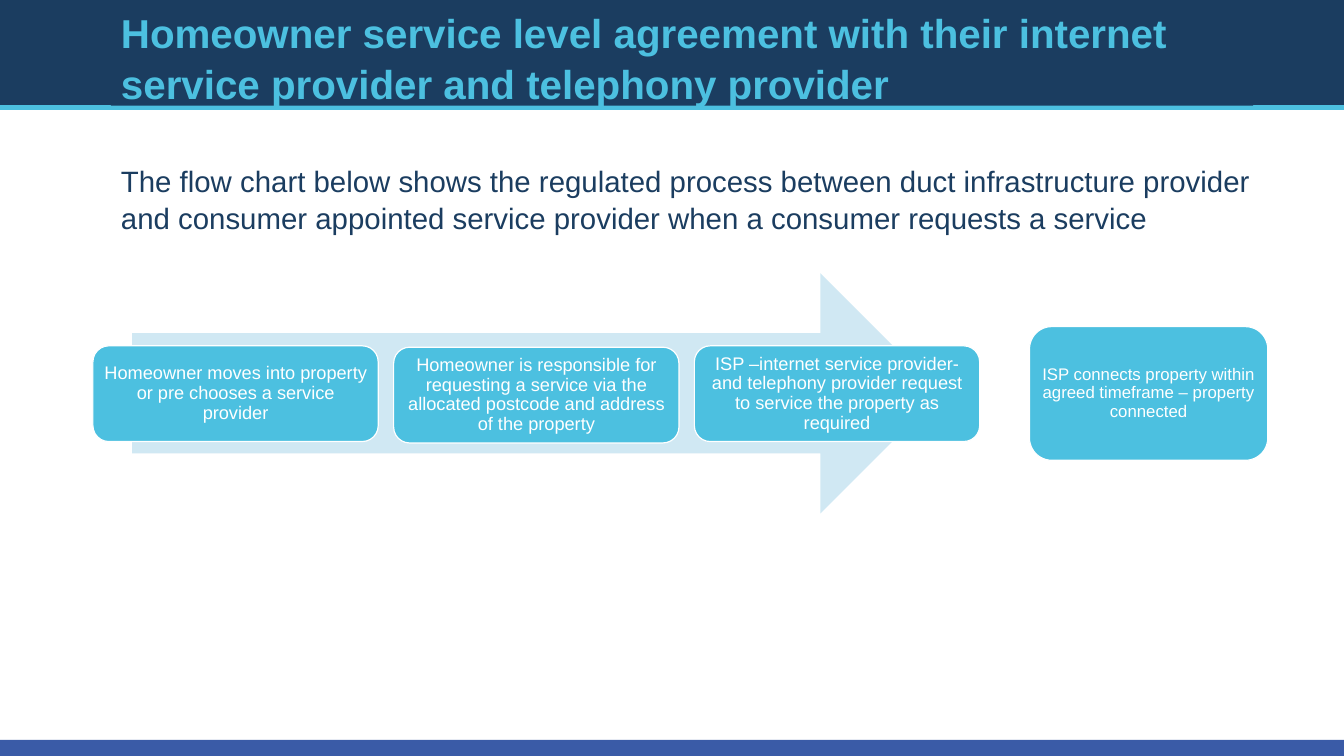
from pptx import Presentation
from pptx import util as u
from pptx.dml.color import RGBColor
from pptx.enum import shapes, text
from pptx.oxml.ns import qn
from lxml import etree

NAVY, SKY, PALE, BLUE, WHITE = "1B3D60", "4CC0E0", "D0E8F3", "3A5BA7", "FFFFFF"
PAGE_WIDTH, PAGE_HEIGHT = 960, 540


def colour(value):
    return RGBColor.from_string(value)


class SlideBuilder:
    font_name = "Arial"

    def __init__(self, page):
        self.page = page
        self.backdrop_index = 2

    def send_back(self, item):
        self.page.shapes._spTree.insert(self.backdrop_index, item._element)
        self.backdrop_index += 1

    def shape(self, kind, left, top, width, height, fill, outline=None):
        box = self.page.shapes.add_shape(
            kind, u.Pt(left), u.Pt(top), u.Pt(width), u.Pt(height))
        box.shadow.inherit = False
        box.fill.solid()
        box.fill.fore_color.rgb = colour(fill)
        if outline:
            box.line.color.rgb = colour(outline)
            box.line.width = u.Pt(0.85)
        else:
            box.line.fill.background()
        return box

    def band(self, top, height, fill):
        self.send_back(self.shape(
            shapes.MSO_SHAPE.RECTANGLE, 0, top, PAGE_WIDTH, height, fill))

    def rule(self, top, width, stroke):
        line = self.page.shapes.add_connector(
            shapes.MSO_CONNECTOR.STRAIGHT, 0, u.Pt(top), u.Pt(PAGE_WIDTH), u.Pt(top))
        line.line.color.rgb = colour(stroke)
        line.line.width = u.Pt(width)
        etree.SubElement(line._element.spPr, qn("a:effectLst"))
        self.send_back(line)

    def label(self, box, words, size, ink, anchor, align, spacing=1.0, bold=False):
        frame = box.text_frame
        frame.word_wrap = True
        frame.auto_size = text.MSO_AUTO_SIZE.NONE
        frame.vertical_anchor = anchor
        para = frame.paragraphs[0]
        para.alignment = align
        para.line_spacing = spacing
        para.space_before = u.Pt(0)
        span = para.add_run()
        span.text = words
        span.font.name = self.font_name
        span.font.size = u.Pt(size)
        span.font.bold = bold
        span.font.color.rgb = colour(ink)
        return para

    def place(self, box, left, top, width, height):
        box.left, box.top = u.Pt(left), u.Pt(top)
        box.width, box.height = u.Pt(width), u.Pt(height)

    def title(self, words):
        box = self.page.shapes.title
        self.place(box, 79.2, 5, 816, 70.5)
        box.fill.solid()
        box.fill.fore_color.rgb = colour(NAVY)
        self.label(box, words, 28.8, SKY, text.MSO_ANCHOR.MIDDLE,
                   text.PP_ALIGN.LEFT, spacing=1.05, bold=True)

    def body(self, words):
        box = self.page.placeholders[1]
        self.place(box, 79.2, 83, 858, 88.5)
        para = self.label(box, words, 21, NAVY, text.MSO_ANCHOR.BOTTOM,
                          text.PP_ALIGN.LEFT, spacing=1.03)
        props = para._p.get_or_add_pPr()
        props.set("marL", "0")
        props.set("indent", "0")
        etree.SubElement(props, qn("a:buNone"))

    def step(self, words, left, top, width, height, size, inset):
        box = self.shape(shapes.MSO_SHAPE.ROUNDED_RECTANGLE,
                         left, top, width, height, SKY, WHITE)
        frame = box.text_frame
        frame.margin_left = frame.margin_right = u.Pt(inset)
        frame.margin_top = frame.margin_bottom = u.Pt(inset)
        self.label(box, words, size, WHITE, text.MSO_ANCHOR.MIDDLE,
                   text.PP_ALIGN.CENTER, spacing=0.9)


def main():
    deck = Presentation()
    deck.slide_width, deck.slide_height = u.Pt(PAGE_WIDTH), u.Pt(PAGE_HEIGHT)
    slide = SlideBuilder(deck.slides.add_slide(deck.slide_layouts[1]))

    slide.band(528.5, 11.5, BLUE)
    slide.band(0, 77, NAVY)
    slide.rule(77, 3.5, SKY)
    slide.title("Homeowner service level agreement with their internet "
                "service provider and telephony provider")
    slide.body("The flow chart below shows the regulated process between duct "
               "infrastructure provider and consumer appointed service provider "
               "when a consumer requests a service")

    slide.shape(shapes.MSO_SHAPE.RIGHT_ARROW, 94.3, 195.2, 577.5, 171.5, PALE)
    steps = [
        ("Homeowner moves into property or pre chooses a service provider", 247),
        ("Homeowner is responsible for requesting a service via the allocated "
         "postcode and address of the property", 248),
        ("ISP –internet service provider- and telephony provider request to "
         "service the property as required", 247),
    ]
    for index, (words, top) in enumerate(steps):
        slide.step(words, 66.4 + index * 214.8, top, 203.8, 68.4, 13, 3.6)
    slide.step("ISP connects property within agreed timeframe – property connected",
               735.4, 233.3, 170.2, 95.5, 12, 2.3)

    deck.save("out.pptx")


if __name__ == "__main__":
    main()
